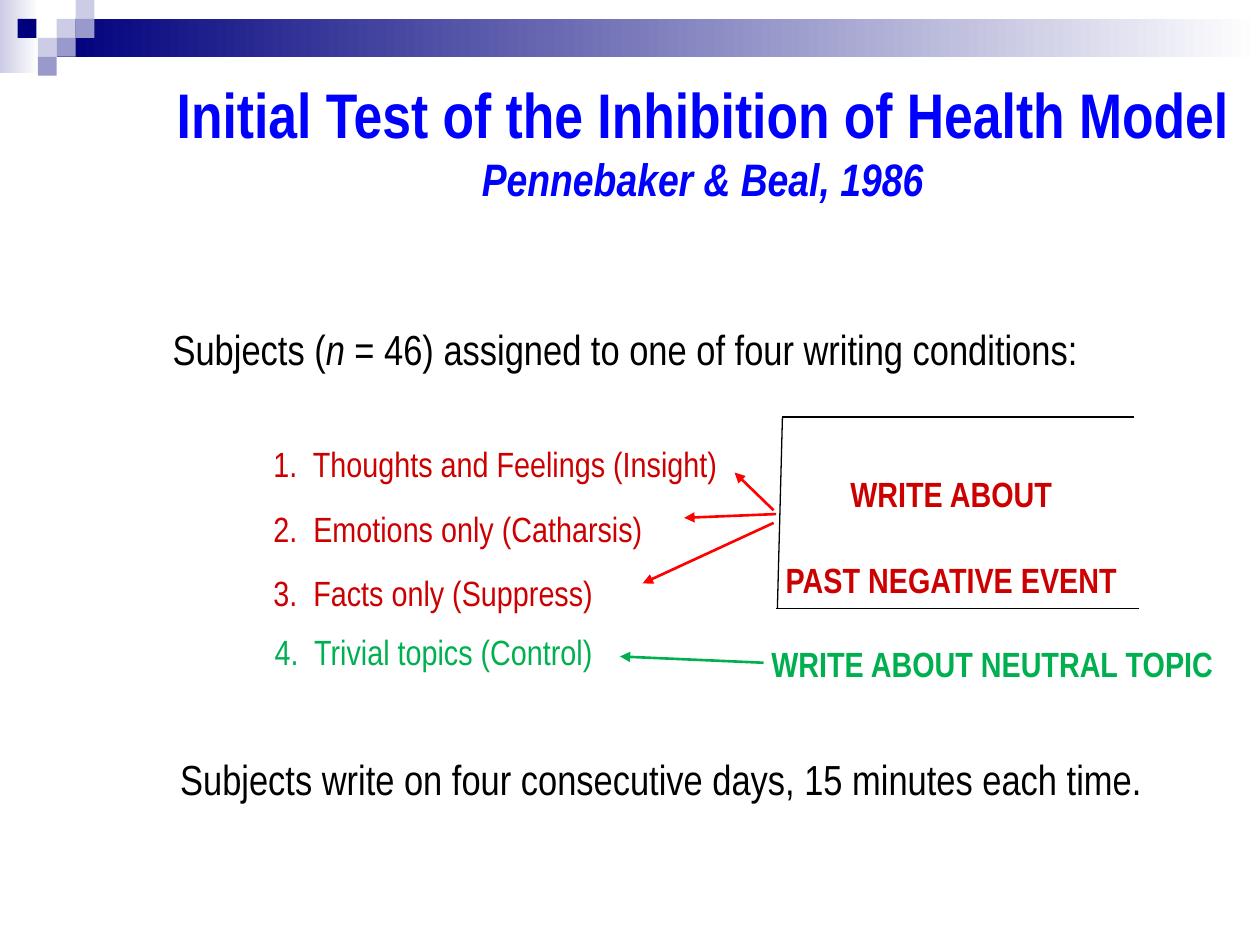
from typing import NamedTuple

from lxml.etree import SubElement
from pptx import Presentation
from pptx.dml.color import RGBColor
from pptx.enum.shapes import MSO_CONNECTOR as Link, MSO_SHAPE as Preset
from pptx.enum.text import PP_ALIGN as Align
from pptx.oxml.ns import qn
from pptx.util import Inches, Pt

COLORS = {
    "navy": "00007D", "lilac": "CCCCE6", "violet": "9999CC", "white": "FFFFFF",
    "blue": "0000FF", "black": "000000", "crimson": "CC0000",
    "red": "FF0000", "green": "00B050",
}
COLUMNS, ROWS = 100, 75
WIDTH, HEIGHT = Inches(10), Inches(7.5)
TILE = 1.5


class Area(NamedTuple):
    col: float
    row: float
    cols: float
    rows: float


class Tile(NamedTuple):
    col: float
    row: int
    color: str


class Stroke(NamedTuple):
    start: tuple[float, float]
    end: tuple[float, float]
    color: str = "black"
    weight: float = 0.75
    arrow: bool = False


class Span(NamedTuple):
    text: str
    size: float
    bold: bool = False
    italic: bool = False


TILES = [
    Tile(3, 1, "lilac"), Tile(4, 0, "lilac"), Tile(4, 1, "violet"),
    Tile(2, 2, "lilac"), Tile(0.93, 1, "navy"), Tile(3, 2, "violet"),
    Tile(2, 3, "violet"),
]
STROKES = [
    Stroke((62.1, 33.1), (90, 33.1)),
    Stroke((62.1, 33.1), (61.7, 48.3)),
    Stroke((61.6, 48.3), (90.4, 48.3)),
    Stroke((61.4, 40.5), (58.3, 37.5), "red", 1.5, True),
    Stroke((61.6, 40.8), (54.3, 41.1), "red", 1.5, True),
    Stroke((61.4, 41.5), (51, 46.3), "red", 1.5, True),
    Stroke((60.6, 52.6), (49.2, 52.1), "green", 1.5, True),
]


def rgb(name: str) -> RGBColor:
    """Look up a palette colour."""
    return RGBColor.from_string(COLORS[name])


def across(cols: float) -> int:
    """Turn grid columns into a length."""
    return round(WIDTH * cols / COLUMNS)


def down(rows: float) -> int:
    """Turn grid rows into a length."""
    return round(HEIGHT * rows / ROWS)


def placed(area: Area) -> tuple[int, int, int, int]:
    """Turn a grid area into left, top, width and height."""
    return across(area.col), down(area.row), across(area.cols), down(area.rows)


def add_block(slide, area: Area, color: str, fade: bool = False) -> None:
    """Draw a borderless rectangle, plain or fading to white."""
    block = slide.shapes.add_shape(Preset.RECTANGLE, *placed(area))
    block.shadow.inherit = False
    block.line.fill.background()
    if fade:
        block.fill.gradient()
        block.fill.gradient_angle = 0
        for stop, name, position in zip(block.fill.gradient_stops, (color, "white"), (0, 1)):
            stop.color.rgb = rgb(name)
            stop.position = position
    else:
        block.fill.solid()
        block.fill.fore_color.rgb = rgb(color)


def add_stroke(slide, stroke: Stroke) -> None:
    """Draw a straight line with an optional arrowhead."""
    (x1, y1), (x2, y2) = stroke.start, stroke.end
    line = slide.shapes.add_connector(
        Link.STRAIGHT, across(x1), down(y1), across(x2), down(y2))
    line.line.color.rgb = rgb(stroke.color)
    line.line.width = Pt(stroke.weight)
    if stroke.arrow:
        SubElement(line.line._get_or_add_ln(), qn("a:tailEnd"), type="triangle")
    SubElement(line._element.spPr, qn("a:effectLst"))


def add_text(slide, area: Area, *paragraphs: list[Span], color: str = "black",
             align: Align = Align.LEFT, gap: float = 0) -> None:
    """Write paragraphs of spans into a text box without margins."""
    frame = slide.shapes.add_textbox(*placed(area)).text_frame
    frame.word_wrap = True
    frame.margin_left = frame.margin_right = frame.margin_top = frame.margin_bottom = 0
    for index, spans in enumerate(paragraphs):
        paragraph = frame.add_paragraph() if index else frame.paragraphs[0]
        paragraph.alignment = align
        paragraph.space_before = Pt(gap if index else 0)
        for span in spans:
            run = paragraph.add_run()
            run.text = span.text
            run.font.name = "Arial Narrow"
            run.font.size = Pt(span.size)
            run.font.bold = span.bold
            run.font.italic = span.italic
            run.font.color.rgb = rgb(color)


def main() -> None:
    """Build the slide and save it."""
    deck = Presentation()
    deck.slide_width, deck.slide_height = WIDTH, HEIGHT
    slide = deck.slides.add_slide(deck.slide_layouts[6])

    add_block(slide, Area(0, 0, 3.1, 5.8), "lilac", fade=True)
    add_block(slide, Area(3 * TILE, TILE, COLUMNS - 3 * TILE, 2 * TILE), "navy", fade=True)
    for tile in TILES:
        add_block(slide, Area(tile.col * TILE, tile.row * TILE, TILE, TILE), tile.color)

    add_text(slide, Area(5.8, 6, 100, 10.5),
             [Span("Initial Test of the Inhibition of Health Model", 36, bold=True)],
             [Span("Pennebaker & Beal, 1986", 26, bold=True, italic=True)],
             color="blue", align=Align.CENTER)
    add_text(slide, Area(13.7, 25.7, 82.5, 4),
             [Span("Subjects (", 24), Span("n", 24, italic=True),
              Span(" = 46) assigned to one of four writing conditions:", 24)])
    add_text(slide, Area(21.7, 35.1, 40, 13.2),
             [Span("1.  Thoughts and Feelings (Insight)", 20)],
             [Span("2.  Emotions only (Catharsis)", 20)],
             [Span("3.  Facts only (Suppress)", 20)],
             color="crimson", gap=13)
    add_text(slide, Area(21.8, 50, 29.3, 3.2),
             [Span("4.  Trivial topics (Control)", 20)], color="green")
    add_text(slide, Area(51, 37.5, 49, 10),
             [Span("WRITE ABOUT", 20, bold=True)],
             [Span("PAST NEGATIVE EVENT", 20, bold=True)],
             color="crimson", align=Align.CENTER, gap=25)
    add_text(slide, Area(57, 51, 39.3, 3.2),
             [Span("WRITE ABOUT NEUTRAL TOPIC", 20, bold=True)],
             color="green", align=Align.RIGHT)
    add_text(slide, Area(14.3, 59.8, 82.5, 4),
             [Span("Subjects write on four consecutive days, 15 minutes each time.", 24)])

    for stroke in STROKES:
        add_stroke(slide, stroke)
    deck.save("out.pptx")


if __name__ == "__main__":
    main()
